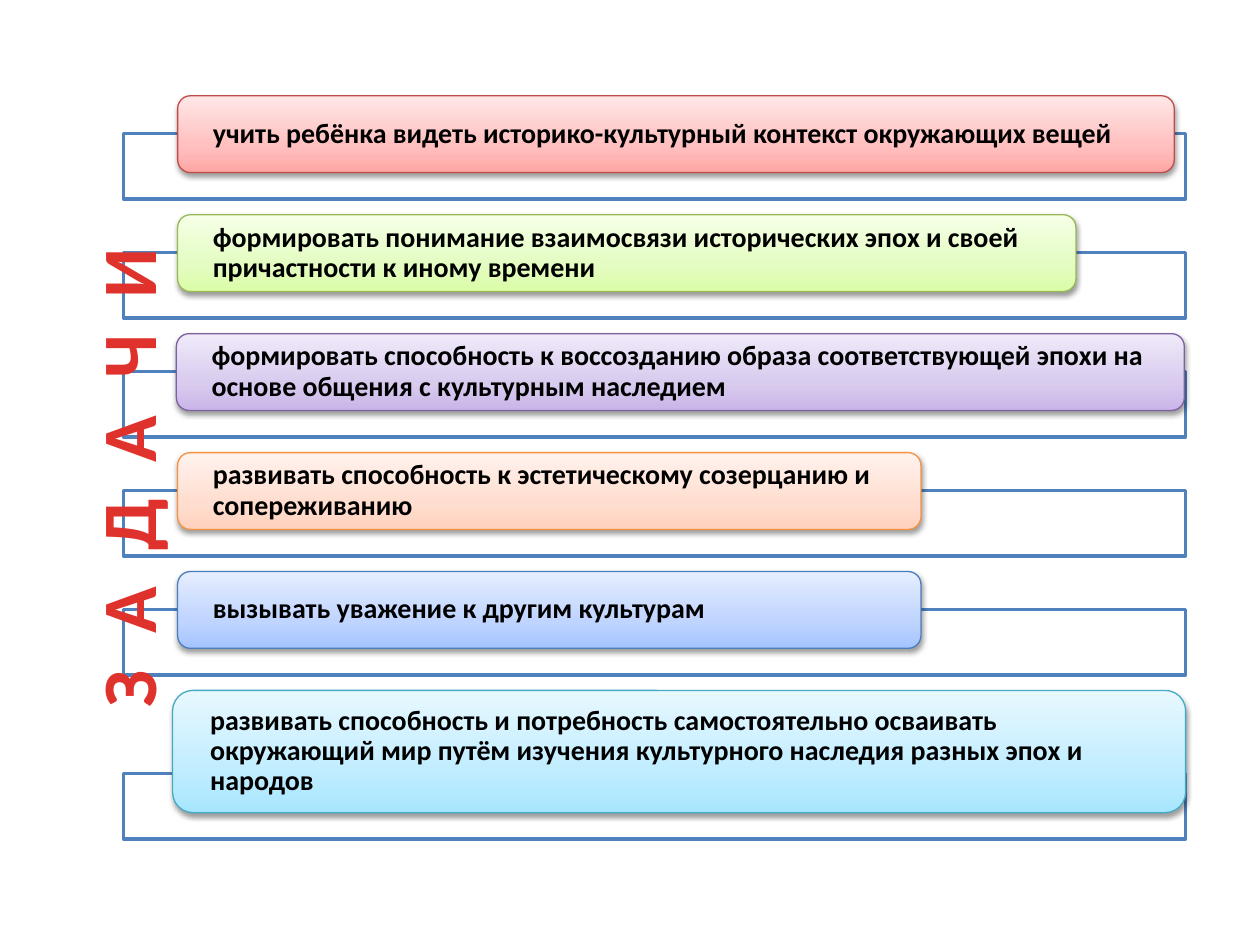
import copy
from dataclasses import dataclass

import pptx
import pptx.dml.color
import pptx.enum.shapes
import pptx.enum.text
import pptx.oxml
import pptx.oxml.ns
import pptx.util
from pptx.dml.color import RGBColor
from pptx.util import Inches, Pt

BLACK = RGBColor(0x00, 0x00, 0x00)
WHITE = RGBColor(0xFF, 0xFF, 0xFF)
FRAME_BLUE = RGBColor(0x4F, 0x81, 0xBD)
TITLE_STOPS = ((0.25, RGBColor(0xE0, 0x32, 0x2D)), (1, RGBColor(0xA2, 0x20, 0x1C)))


@dataclass(frozen=True)
class Palette:
    deep: RGBColor
    middle: RGBColor
    pale: RGBColor
    outline: RGBColor


RED = Palette(RGBColor(0xFF, 0xA6, 0xA5), RGBColor(0xFF, 0xC0, 0xBF),
              RGBColor(0xFF, 0xE7, 0xE7), RGBColor(0xBF, 0x4C, 0x48))
GREEN = Palette(RGBColor(0xDA, 0xFD, 0xA7), RGBColor(0xE4, 0xFC, 0xC2),
                RGBColor(0xF5, 0xFF, 0xE7), RGBColor(0x98, 0xB9, 0x55))
PURPLE = Palette(RGBColor(0xC9, 0xB5, 0xE8), RGBColor(0xD8, 0xCB, 0xEE),
                 RGBColor(0xF0, 0xEA, 0xF9), RGBColor(0x7D, 0x60, 0xA0))
ORANGE = Palette(RGBColor(0xFF, 0xD2, 0xBD), RGBColor(0xFF, 0xDE, 0xD0),
                 RGBColor(0xFF, 0xF2, 0xED), RGBColor(0xF6, 0x92, 0x40))
BLUE = Palette(RGBColor(0xA4, 0xC4, 0xFF), RGBColor(0xBF, 0xD4, 0xFF),
               RGBColor(0xE6, 0xEE, 0xFF), RGBColor(0x4B, 0x7E, 0xBC))
AQUA = Palette(RGBColor(0xA7, 0xE6, 0xFF), RGBColor(0xC1, 0xED, 0xFF),
               RGBColor(0xE7, 0xF8, 0xFF), RGBColor(0x46, 0xAA, 0xC5))


@dataclass(frozen=True)
class Task:
    text: str
    palette: Palette
    width: float
    left: float = 1.41
    height: float = 0.61


TASKS = (
    Task("учить ребёнка видеть историко-культурный контекст окружающих вещей", RED, 7.91),
    Task("формировать понимание взаимосвязи исторических эпох и своей "
         "причастности к иному времени", GREEN, 7.13),
    Task("формировать способность к воссозданию образа соответствующей эпохи на "
         "основе общения с культурным наследием", PURPLE, 8, left=1.4),
    Task("развивать способность к эстетическому созерцанию и сопереживанию", ORANGE, 5.9),
    Task("вызывать уважение к другим культурам", BLUE, 5.9),
    Task("развивать способность и потребность самостоятельно осваивать окружающий мир "
         "путём изучения культурного наследия разных эпох и народов",
         AQUA, 8.04, left=1.37, height=0.97),
)
FIRST_TOP, LAST_TOP = 0.76, 5.48
STEP = (LAST_TOP - FIRST_TOP) / (len(TASKS) - 1)
FRAME_LEFT, FRAME_WIDTH, FRAME_HEIGHT, FRAME_OVERLAP = 0.98, 8.43, 0.52, 0.31

CARD_FRAME = {
    "word_wrap": True,
    "vertical_anchor": pptx.enum.text.MSO_ANCHOR.MIDDLE,
    "margin_left": Inches(0.25),
    "margin_right": Inches(0.25),
    "margin_top": Inches(0.03),
    "margin_bottom": Inches(0.03),
}
CARD_PARAGRAPH = {"alignment": pptx.enum.text.PP_ALIGN.LEFT, "line_spacing": 0.9}
CARD_FONT = {"name": "Calibri", "size": Pt(16), "bold": True}
TITLE_FRAME = {"word_wrap": True, "auto_size": pptx.enum.text.MSO_AUTO_SIZE.SHAPE_TO_FIT_TEXT}
TITLE_FONT = {"name": "Calibri", "size": Pt(44), "bold": True}
SHADOW = (
    f'<a:outerShdw {pptx.oxml.ns.nsdecls("a")} blurRad="{Pt(3.1)}" dist="{Pt(1.6)}" '
    'dir="5400000" rotWithShape="0"><a:srgbClr val="000000"><a:alpha val="38000"/>'
    "</a:srgbClr></a:outerShdw>"
)


def apply_format(target, values: dict) -> None:
    for name, value in values.items():
        setattr(target, name, value)


def paint_gradient(fill, owner, stops, angle: int) -> None:
    """Fill with any number of stops; owner is the XML element holding the fill."""
    fill.gradient()
    fill.gradient_angle = angle
    stop_list = next(owner.iter(pptx.oxml.ns.qn("a:gsLst")))
    while len(stop_list) < len(stops):
        stop_list.append(copy.deepcopy(stop_list[0]))
    for stop, (position, color) in zip(fill.gradient_stops, stops):
        stop.position = position
        stop.color.rgb = color


def add_plain_shape(page, kind, left: float, top: float, width: float, height: float,
                    outline: RGBColor, weight: float):
    shape = page.shapes.add_shape(kind, Inches(left), Inches(top), Inches(width), Inches(height))
    shape.shadow.inherit = False
    shape.line.color.rgb = outline
    shape.line.width = Pt(weight)
    return shape


def add_frame(page, top: float) -> None:
    frame = add_plain_shape(page, pptx.enum.shapes.MSO_SHAPE.RECTANGLE, FRAME_LEFT, top,
                            FRAME_WIDTH, FRAME_HEIGHT, FRAME_BLUE, 2)
    frame.fill.solid()
    frame.fill.fore_color.rgb = WHITE
    color = frame._element.spPr.find(pptx.oxml.ns.qn("a:solidFill"))[0]
    color.append(pptx.oxml.parse_xml(f'<a:alpha {pptx.oxml.ns.nsdecls("a")} val="90000"/>'))


def add_card(page, task: Task, top: float) -> None:
    palette = task.palette
    card = add_plain_shape(page, pptx.enum.shapes.MSO_SHAPE.ROUNDED_RECTANGLE, task.left, top,
                           task.width, task.height, palette.outline, 0.75)
    stops = ((0, palette.deep), (0.35, palette.middle), (1, palette.pale))
    properties = card._element.spPr
    paint_gradient(card.fill, properties, stops, 90)
    properties.find(pptx.oxml.ns.qn("a:effectLst")).append(pptx.oxml.parse_xml(SHADOW))
    apply_format(card.text_frame, CARD_FRAME)
    para = card.text_frame.paragraphs[0]
    apply_format(para, CARD_PARAGRAPH)
    span = para.add_run()
    span.text = task.text
    apply_format(span.font, CARD_FONT)
    span.font.color.rgb = BLACK


def add_title(page) -> None:
    box = page.shapes.add_textbox(Inches(-1.08), Inches(3.21), Inches(4.17), Inches(0.84))
    box.rotation = 270
    apply_format(box.text_frame, TITLE_FRAME)
    span = box.text_frame.paragraphs[0].add_run()
    span.text = "З А Д А Ч И"
    apply_format(span.font, TITLE_FONT)
    properties = span._r.get_or_add_rPr()
    properties.set("spc", "550")
    paint_gradient(span.font.fill, properties, TITLE_STOPS, 270)


def main() -> None:
    deck = pptx.Presentation()
    deck.slide_width, deck.slide_height = Inches(10), Inches(7.5)
    page = deck.slides.add_slide(deck.slide_layouts[6])
    for index, task in enumerate(TASKS):
        top = FIRST_TOP + index * STEP
        add_frame(page, top + task.height - FRAME_OVERLAP)
        add_card(page, task, top)
    add_title(page)
    deck.save("out.pptx")


if __name__ == "__main__":
    main()
